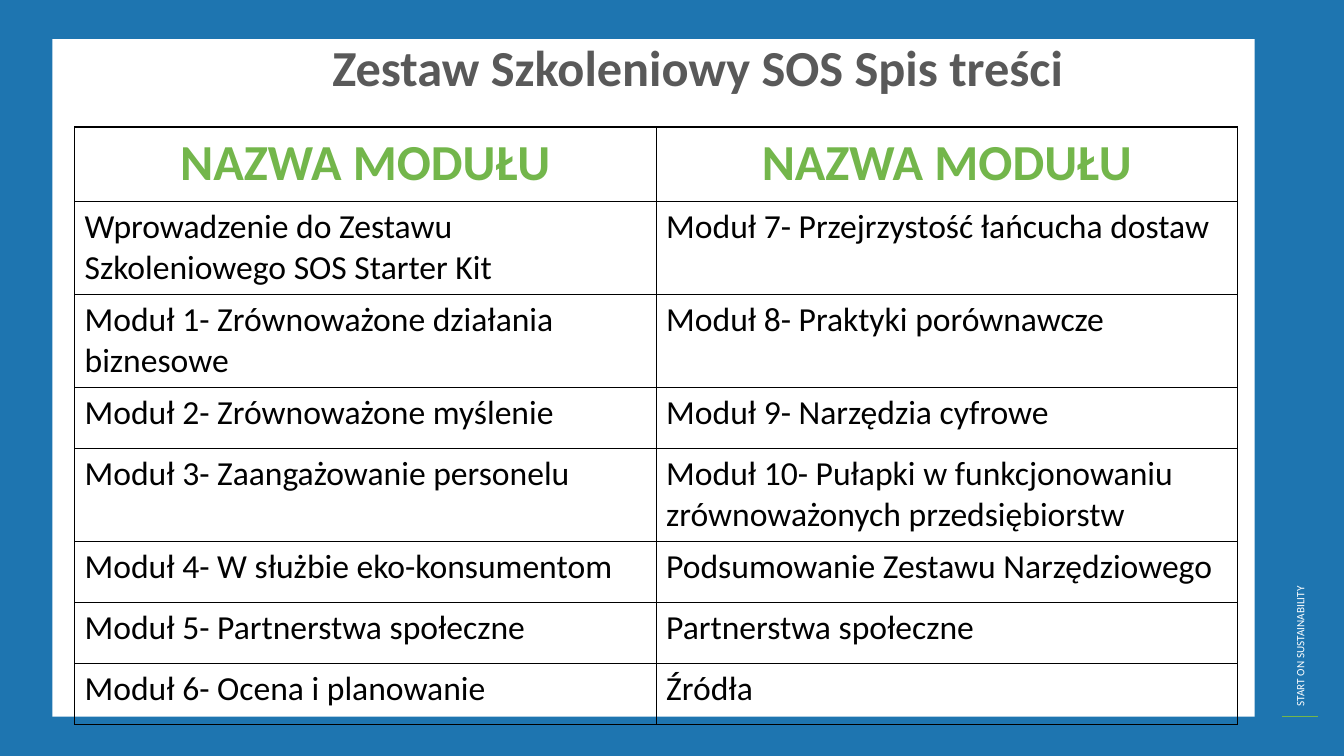
from lxml.etree import SubElement
from pptx import Presentation
from pptx.dml.color import RGBColor
from pptx.enum.shapes import MSO_CONNECTOR, MSO_SHAPE
from pptx.enum.text import PP_ALIGN
from pptx.oxml.ns import qn
from pptx.util import Cm, Pt

COLORS = {
    "frame": "1E75B0",
    "white": "FFFFFF",
    "green": "73B64B",
    "title": "595959",
    "body": "010101",
    "border": "000000",
}
FONT = "Calibri"
SLIDE_WIDTH, SLIDE_HEIGHT = 33.87, 19.05
HEADER = "NAZWA MODUŁU"
MODULES = [
    ("Wprowadzenie do Zestawu Szkoleniowego SOS Starter Kit",
     "Moduł 7- Przejrzystość łańcucha dostaw"),
    ("Moduł 1- Zrównoważone działania biznesowe", "Moduł 8- Praktyki porównawcze"),
    ("Moduł 2- Zrównoważone myślenie", "Moduł 9- Narzędzia cyfrowe"),
    ("Moduł 3- Zaangażowanie personelu",
     "Moduł 10- Pułapki w funkcjonowaniu zrównoważonych przedsiębiorstw"),
    ("Moduł 4- W służbie eko-konsumentom", "Podsumowanie Zestawu Narzędziowego"),
    ("Moduł 5- Partnerstwa społeczne", "Partnerstwa społeczne"),
    ("Moduł 6- Ocena i planowanie", "Źródła"),
]
HEADER_HEIGHT, TALL_ROW, SHORT_ROW = 1.88, 2.34, 1.54
TALL_ROWS = {1, 2, 4}


def color(name):
    """Return the named colour."""
    return RGBColor.from_string(COLORS[name])


def add_run(paragraph, text, size, color_name, bold=False):
    """Append a formatted run to a paragraph."""
    run = paragraph.add_run()
    run.text = text
    run.font.name = FONT
    run.font.size = Pt(size)
    run.font.bold = bold
    run.font.color.rgb = color(color_name)


def add_panel(slide, left, top, width, height, color_name):
    """Draw a plain filled rectangle."""
    shape = slide.shapes.add_shape(
        MSO_SHAPE.RECTANGLE, Cm(left), Cm(top), Cm(width), Cm(height))
    shape.shadow.inherit = False
    shape.fill.solid()
    shape.fill.fore_color.rgb = color(color_name)
    shape.line.fill.background()


def add_side_label(slide, left, bottom, width, length):
    """Place the upright slogan above a short green rule."""
    thickness = 0.61
    center_x = left + width / 2
    center_y = bottom - length / 2
    label = slide.shapes.add_textbox(
        Cm(center_x - length / 2), Cm(center_y - thickness / 2),
        Cm(length), Cm(thickness))
    label.rotation = 270
    label.text_frame.word_wrap = True
    add_run(label.text_frame.paragraphs[0], "START ON SUSTAINABILITY", 8, "white")
    rule = slide.shapes.add_connector(
        MSO_CONNECTOR.STRAIGHT, Cm(left), Cm(bottom), Cm(left + width), Cm(bottom))
    rule.line.color.rgb = color("green")
    rule.line.width = Pt(1)
    SubElement(rule._element.spPr, qn("a:effectLst"))


def add_title(slide, left, top, width, height):
    """Place the centred heading."""
    title = slide.shapes.add_textbox(Cm(left), Cm(top), Cm(width), Cm(height))
    title.text_frame.word_wrap = True
    paragraph = title.text_frame.paragraphs[0]
    paragraph.alignment = PP_ALIGN.CENTER
    paragraph.line_spacing = 0.9
    paragraph.space_before = Pt(10)
    properties = paragraph._p.get_or_add_pPr()
    properties.set("marL", str(Cm(1.27)))
    properties.set("indent", str(-Cm(0.64)))
    add_run(paragraph, "Zestaw Szkoleniowy SOS Spis treści", 36, "title", True)


def outline_cell(cell):
    """Give a cell thin borders and no fill."""
    properties = cell._tc.get_or_add_tcPr()
    for side in ("lnL", "lnR", "lnT", "lnB"):
        line = SubElement(properties, qn(f"a:{side}"), w=str(Pt(1)))
        fill = SubElement(line, qn("a:solidFill"))
        SubElement(fill, qn("a:srgbClr"), val=COLORS["border"])
    cell.fill.background()


def add_module_table(slide, left, top, width):
    """Place the two-column table of modules."""
    rows = [(HEADER, HEADER)] + MODULES
    heights = [HEADER_HEIGHT] + [
        TALL_ROW if index in TALL_ROWS else SHORT_ROW
        for index in range(1, len(rows))]
    table = slide.shapes.add_table(
        len(rows), 2, Cm(left), Cm(top), Cm(width), Cm(sum(heights))).table
    for column in table.columns:
        column.width = Cm(width / 2)
    for row_index, texts in enumerate(rows):
        table.rows[row_index].height = Cm(heights[row_index])
        for column_index, text in enumerate(texts):
            cell = table.cell(row_index, column_index)
            outline_cell(cell)
            paragraph = cell.text_frame.paragraphs[0]
            if row_index == 0:
                paragraph.alignment = PP_ALIGN.CENTER
                add_run(paragraph, text, 36, "green", True)
            else:
                add_run(paragraph, text, 24, "body")


def main():
    """Build and save the contents slide."""
    presentation = Presentation()
    presentation.slide_width = Cm(SLIDE_WIDTH)
    presentation.slide_height = Cm(SLIDE_HEIGHT)
    slide = presentation.slides.add_slide(presentation.slide_layouts[6])
    add_panel(slide, 0, 0, SLIDE_WIDTH, SLIDE_HEIGHT, "frame")
    add_panel(slide, 1.32, 0.99, 30.3, 17.07, "white")
    add_side_label(slide, 32.32, 18.05, 0.9, 11.33)
    add_title(slide, 3.38, 0.97, 27.79, 2.24)
    add_module_table(slide, 1.88, 3.2, 29.31)
    presentation.save("out.pptx")


if __name__ == "__main__":
    main()
